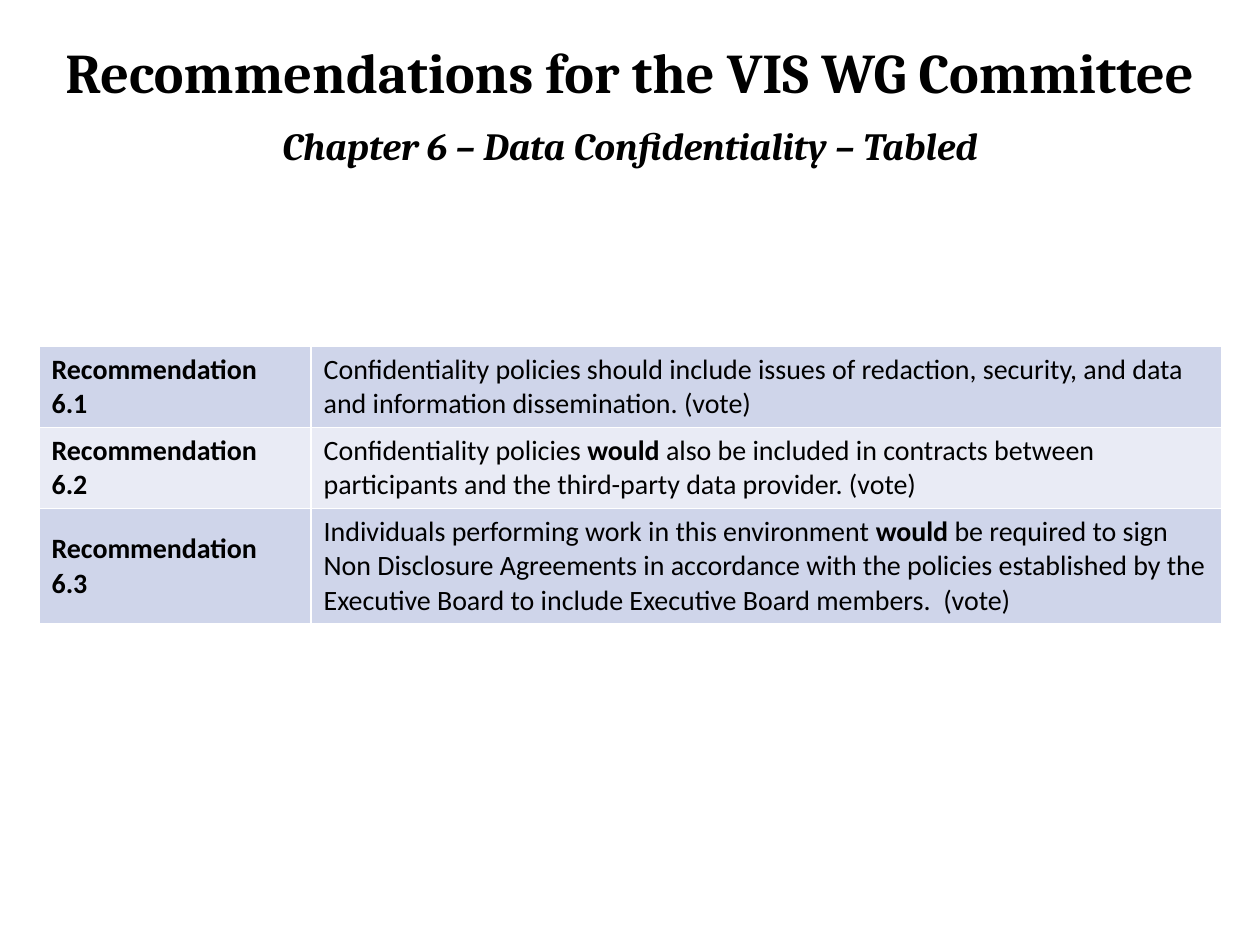
from lxml import etree
from pptx import Presentation
from pptx.dml.color import RGBColor
from pptx.enum.text import MSO_ANCHOR, MSO_AUTO_SIZE, PP_ALIGN
from pptx.oxml.ns import qn
from pptx.util import Inches, Pt

MIDDLE = MSO_ANCHOR.MIDDLE
NO_AUTOFIT = MSO_AUTO_SIZE.NONE
CENTER = PP_ALIGN.CENTER
TITLE_ONLY = 5
COLORS = {"text": "000000", "border": "FFFFFF", "odd": "CFD5EA", "even": "E9EBF5"}
HEADING = "Recommendations for the VIS WG Committee"
CHAPTER = "Chapter 6 – Data Confidentiality – Tabled"
EMPHASIS = "would"
RECOMMENDATIONS = [
    ("Recommendation 6.1",
     "Confidentiality policies should include issues of redaction, security, "
     "and data and information dissemination. (vote)"),
    ("Recommendation 6.2",
     "Confidentiality policies would also be included in contracts between "
     "participants and the third-party data provider. (vote)"),
    ("Recommendation 6.3",
     "Individuals performing work in this environment would be required to sign "
     "Non Disclosure Agreements in accordance with the policies established by the "
     "Executive Board to include Executive Board members.  (vote)"),
]
ROW_HEIGHTS = (0.64, 0.64, 0.91)
LABEL_SHARE = 0.23


def format_run(run, font_name, size, bold, italic=False):
    """Apply typeface, size and emphasis to a run."""
    font = run.font
    font.name, font.size = font_name, Pt(size)
    font.bold, font.italic = bold, italic
    font.color.rgb = RGBColor.from_string(COLORS["text"])


def add_title(slide, left, top, width, height):
    """Fill the title placeholder with the heading and chapter lines."""
    title = slide.shapes.title
    title.left, title.top = Inches(left), Inches(top)
    title.width, title.height = Inches(width), Inches(height)
    frame = title.text_frame
    frame.text = f"{HEADING}\n{CHAPTER}"
    frame.vertical_anchor = MIDDLE
    frame.word_wrap = True
    frame.auto_size = NO_AUTOFIT
    styles = ((32, False, 0), (22, True, 12))
    for paragraph, (size, italic, gap) in zip(frame.paragraphs, styles):
        paragraph.alignment = CENTER
        paragraph.line_spacing = 0.9
        paragraph.space_before = Pt(gap)
        format_run(paragraph.runs[0], "Cambria", size, True, italic)


def add_borders(cell):
    """Draw a thin line on all four sides of a cell."""
    properties = cell._tc.get_or_add_tcPr()
    for position, side in enumerate(("a:lnL", "a:lnR", "a:lnT", "a:lnB")):
        line = etree.Element(qn(side), w=str(Pt(1)))
        fill = etree.SubElement(line, qn("a:solidFill"))
        etree.SubElement(fill, qn("a:srgbClr"), val=COLORS["border"])
        properties.insert(position, line)


def fill_cell(cell, text, is_label, color):
    """Write a cell's text, with the emphasised word in bold."""
    before, word, after = text.partition(EMPHASIS)
    paragraph = cell.text_frame.paragraphs[0]
    for part in filter(None, (before, word, after)):
        run = paragraph.add_run()
        run.text = part
        format_run(run, "Calibri", 16, is_label or part == EMPHASIS)
    cell.vertical_anchor = MIDDLE
    cell.fill.solid()
    cell.fill.fore_color.rgb = RGBColor.from_string(color)
    add_borders(cell)


def add_recommendations(slide, left, top, width):
    """Place the table of recommendations with alternating row colours."""
    frame = slide.shapes.add_table(
        len(RECOMMENDATIONS), 2, Inches(left), Inches(top),
        Inches(width), Inches(sum(ROW_HEIGHTS)))
    table = frame.table
    table.first_row = False
    for column, share in zip(table.columns, (LABEL_SHARE, 1 - LABEL_SHARE)):
        column.width = Inches(width * share)
    for index, texts in enumerate(RECOMMENDATIONS):
        table.rows[index].height = Inches(ROW_HEIGHTS[index])
        color = COLORS["even" if index % 2 else "odd"]
        for column, text in enumerate(texts):
            fill_cell(table.cell(index, column), text, column == 0, color)


def main():
    """Build and save the presentation."""
    presentation = Presentation()
    presentation.slide_width, presentation.slide_height = Inches(10), Inches(7.5)
    slide = presentation.slides.add_slide(presentation.slide_layouts[TITLE_ONLY])
    add_title(slide, 0, 0.27, 10, 1.16)
    add_recommendations(slide, 0.31, 2.75, 9.39)
    presentation.save("out.pptx")


if __name__ == "__main__":
    main()
